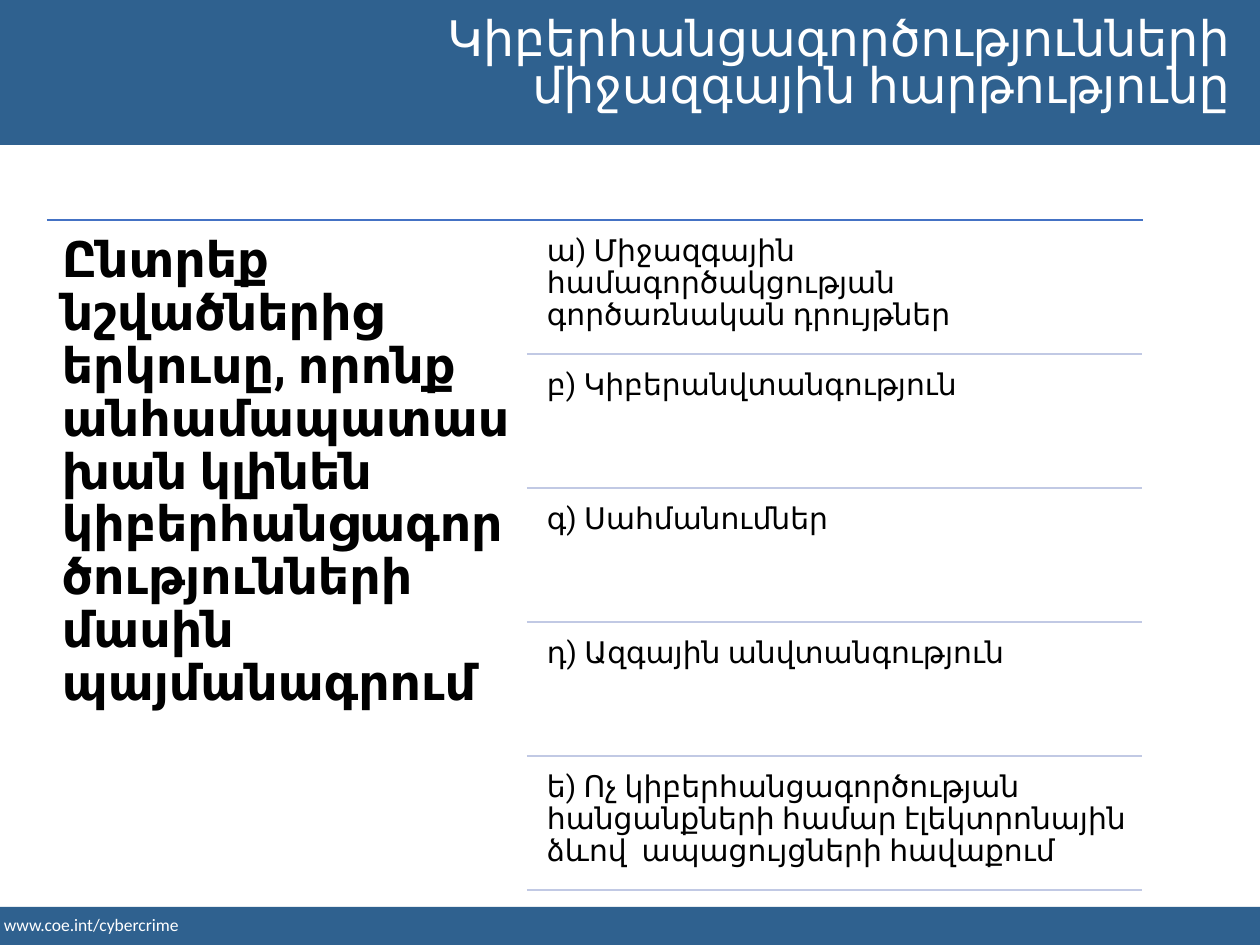
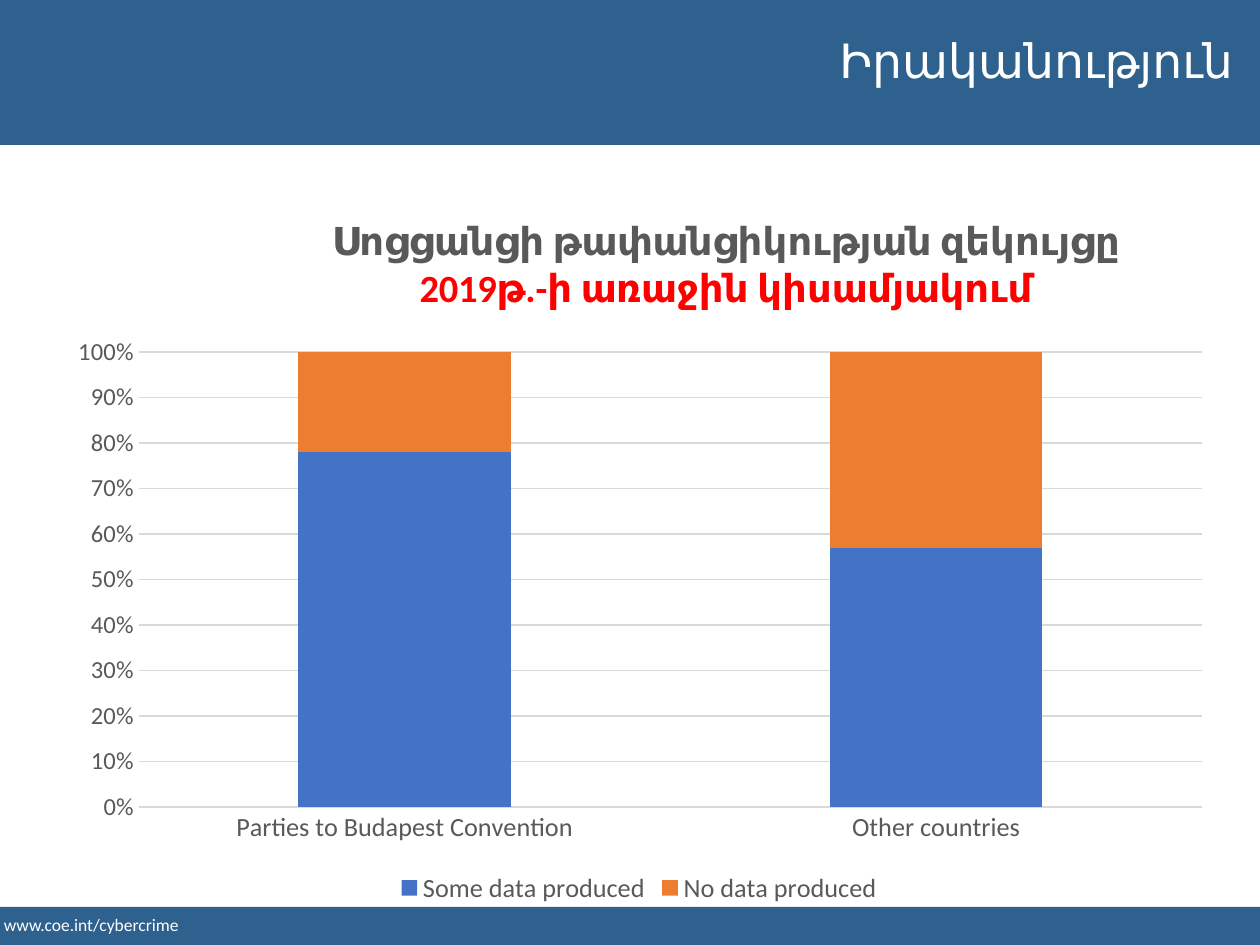
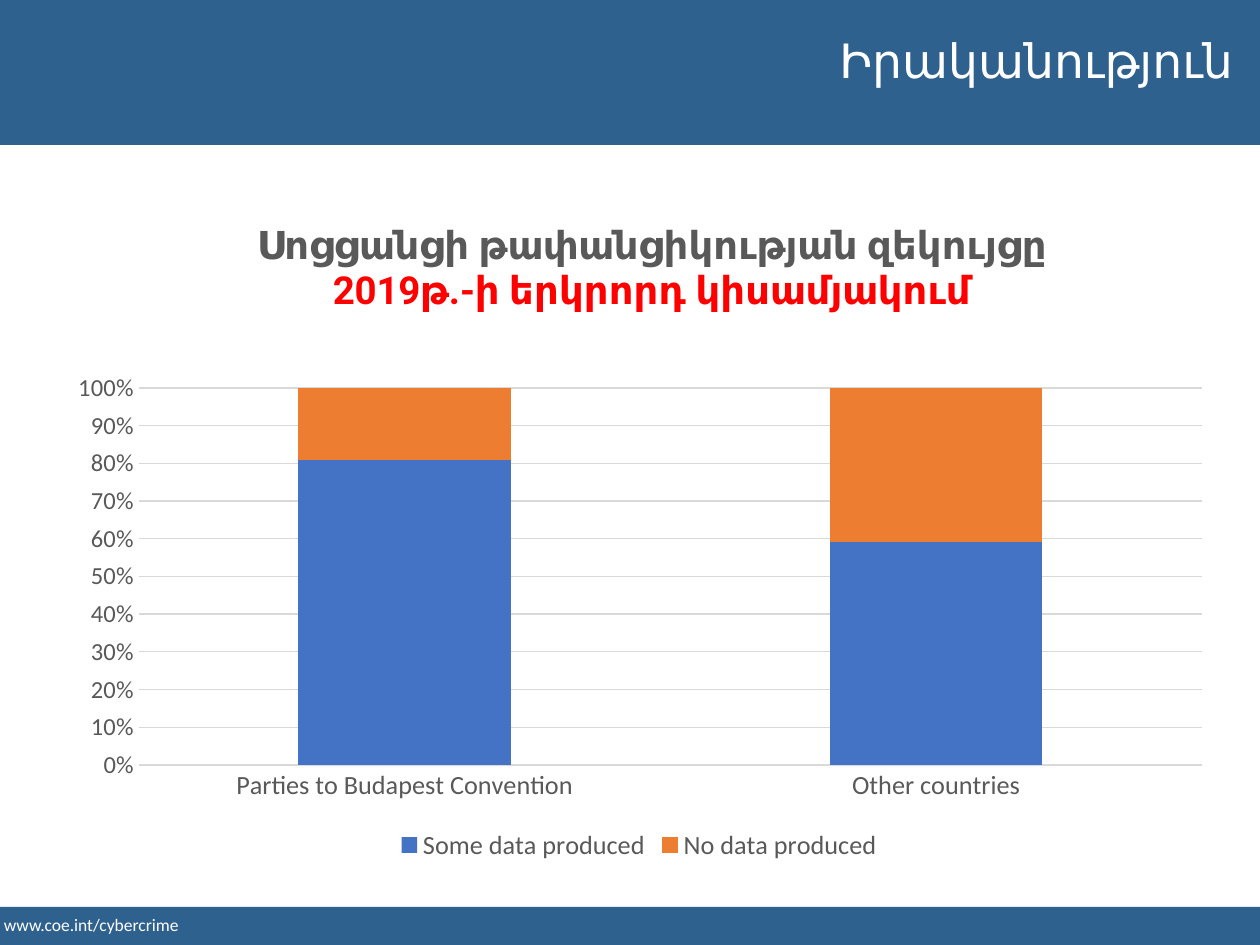
from lxml import etree
from pptx import Presentation
from pptx.chart.data import CategoryChartData
from pptx.dml.color import RGBColor
from pptx.enum.chart import XL_CHART_TYPE, XL_LEGEND_POSITION, XL_TICK_MARK
from pptx.enum.shapes import MSO_CONNECTOR, MSO_SHAPE
from pptx.enum.text import MSO_ANCHOR, PP_ALIGN
from pptx.oxml.ns import qn
from pptx.util import Emu, Pt

STACKED = XL_CHART_TYPE.COLUMN_STACKED_100
BOTTOM = XL_LEGEND_POSITION.BOTTOM
NO_TICK = XL_TICK_MARK.NONE
STRAIGHT = MSO_CONNECTOR.STRAIGHT
RECTANGLE = MSO_SHAPE.RECTANGLE
TOP = MSO_ANCHOR.TOP
LEFT, RIGHT, CENTER = PP_ALIGN.LEFT, PP_ALIGN.RIGHT, PP_ALIGN.CENTER

EMU_PER_PX = 914400 / 126
SLIDE_W, SLIDE_H = 1260, 945

BAND, WHITE, BLACK, RED = "2F618F", "FFFFFF", "000000", "FF0000"
BLUE, ORANGE, PALE_BLUE = "4472C4", "ED7D31", "C1C9E4"
GREY, GRID = "595959", "D9D9D9"
HEADING_FONT, BODY_FONT = "Roboto", "Calibri"

ANSWERS = [
    "ա) Միջազգային համագործակցության գործառնական դրույթներ",
    "բ) Կիբերանվտանգություն",
    "գ) Սահմանումներ",
    "դ) Ազգային անվտանգություն",
    "ե) Ոչ կիբերհանցագործության հանցանքների համար էլեկտրոնային ձևով  ապացույցների հավաքում",
]
COUNTRY_GROUPS = ["Parties to Budapest Convention", "Other countries"]
REPORT = "Սոցցանցի թափանցիկության զեկույցը"


def px(value):
    return Emu(round(value * EMU_PER_PX))


def color(hex_text):
    return RGBColor.from_string(hex_text)


def style_font(font, name, size, hex_text, bold=False):
    font.name, font.size, font.bold = name, Pt(size), bold
    font.color.rgb = color(hex_text)


def write(paragraph, text, font=HEADING_FONT, size=17, hex_text=BLACK,
          bold=False, align=LEFT, spacing=None):
    paragraph.alignment = align
    if spacing:
        paragraph.line_spacing = spacing
    run = paragraph.add_run()
    run.text = text
    style_font(run.font, font, size, hex_text, bold)


def set_frame(frame, inset_x, inset_y):
    frame.word_wrap = True
    frame.vertical_anchor = TOP
    frame.margin_left = frame.margin_right = px(inset_x)
    frame.margin_top = frame.margin_bottom = px(inset_y)


def add_text(slide, box, text, inset_x, inset_y, **fmt):
    textbox = slide.shapes.add_textbox(*map(px, box))
    set_frame(textbox.text_frame, inset_x, inset_y)
    write(textbox.text_frame.paragraphs[0], text, **fmt)
    return textbox


def add_band(slide, top, height):
    band = slide.shapes.add_shape(RECTANGLE, 0, px(top), px(SLIDE_W), px(height))
    band.shadow.inherit = False
    band.fill.solid()
    band.fill.fore_color.rgb = color(BAND)
    band.line.fill.background()
    return band


def add_rule(slide, left, right, y, hex_text):
    rule = slide.shapes.add_connector(STRAIGHT, px(left), px(y), px(right), px(y))
    rule.line.color.rgb = color(hex_text)
    rule.line.width = Pt(1)
    etree.SubElement(rule.element.spPr, qn("a:effectLst"))


def share_bands(slide, layout):
    """Draw the bands and footer, then move them to the layout."""
    parts = [
        add_band(slide, -4, 149),
        add_band(slide, 907, 40),
        add_text(slide, (-9, 908, 444, 34), "www.coe.int/cybercrime", 13, 6,
                 font=BODY_FONT, size=10, hex_text=WHITE),
    ]
    for number, part in enumerate(parts):
        part.element.nvSpPr.cNvPr.set("id", str(100 + number))
        layout.shapes.element.insert(2 + number, part.element)


def set_title(slide, box, text, size, spacing=None):
    title = slide.shapes.title
    title.left, title.top, title.width, title.height = map(px, box)
    set_frame(title.text_frame, 13, 6)
    write(title.text_frame.paragraphs[0], text, size=size, hex_text=WHITE,
          align=RIGHT, spacing=spacing)


def make_layout(chart_box, left, top, width=None, height=None):
    """Manual chart layout for a place given in slide px."""
    chart_left, chart_top, chart_w, chart_h = chart_box
    settings = [("xMode", "edge"), ("yMode", "edge"),
                ("x", (left - chart_left) / chart_w),
                ("y", (top - chart_top) / chart_h)]
    if width:
        settings.insert(0, ("layoutTarget", "inner"))
        settings += [("w", width / chart_w), ("h", height / chart_h)]
    layout = etree.Element(qn("c:layout"))
    manual = etree.SubElement(layout, qn("c:manualLayout"))
    for tag, value in settings:
        text = value if isinstance(value, str) else f"{value:.4f}"
        etree.SubElement(manual, qn(f"c:{tag}")).set("val", text)
    return layout


def replace_layout(parent, layout, index):
    for old in parent.findall(qn("c:layout")):
        parent.remove(old)
    parent.insert(index, layout)


def style_axes(chart):
    countries, share = chart.category_axis, chart.value_axis
    for axis, size in ((countries, 15), (share, 14)):
        axis.major_tick_mark = axis.minor_tick_mark = NO_TICK
        style_font(axis.tick_labels.font, BODY_FONT, size, GREY)
    share.has_major_gridlines = True
    for line in (countries.format.line, share.major_gridlines.format.line):
        line.color.rgb = color(GRID)
        line.width = Pt(0.75)
    share.format.line.fill.background()
    share.tick_labels.number_format = "0%"
    share.tick_labels.number_format_is_linked = False


def add_report_chart(slide, box, plot_box, title_place, title_font, period,
                     produced, refused):
    data = CategoryChartData(number_format="#,##0")
    data.categories = COUNTRY_GROUPS
    data.add_series("Some data produced", produced)
    data.add_series("No data produced", refused)
    chart = slide.shapes.add_chart(STACKED, *map(px, box), data).chart
    style_font(chart.font, BODY_FONT, 10, BLACK)

    # Bars
    plot = chart.plots[0]
    plot.gap_width, plot.overlap, plot.vary_by_categories = 150, 100, False
    for series, fill in zip(plot.series, (BLUE, ORANGE)):
        series.format.fill.solid()
        series.format.fill.fore_color.rgb = color(fill)
    style_axes(chart)
    replace_layout(chart.element.chart.plotArea, make_layout(box, *plot_box), 0)

    # Legend
    chart.has_legend = True
    chart.legend.position = BOTTOM
    chart.legend.include_in_layout = False
    style_font(chart.legend.font, BODY_FONT, 15, GREY)

    # Heading
    chart.has_title = True
    heading = chart.chart_title.text_frame
    write(heading.paragraphs[0], REPORT, font=title_font, size=22,
          hex_text=GREY, bold=True, align=CENTER)
    write(heading.add_paragraph(), period, font=title_font, size=22,
          hex_text=RED, bold=True, align=CENTER)
    replace_layout(chart.chart_title.element, make_layout(box, *title_place), 1)


def add_question(slide):
    add_rule(slide, 47, 1143, 220, BLUE)
    add_text(slide, (47, 220, 480, 677),
             "Ընտրեք նշվածներից երկուսը, որոնք անհամապատասխան կլինեն "
             "կիբերհանցագործությունների մասին պայմանագրում",
             15, 15, size=28, bold=True, spacing=0.9)
    row_pitch = 134
    for row, answer in enumerate(ANSWERS):
        top = 227 + row * row_pitch
        add_text(slide, (538, top, 604, 127), answer, 9, 9, spacing=0.9)
        add_rule(slide, 527, 1142, top + 127, PALE_BLUE)


def main():
    deck = Presentation()
    deck.slide_width, deck.slide_height = px(SLIDE_W), px(SLIDE_H)
    title_only = deck.slide_layouts[5]

    # Question
    question = deck.slides.add_slide(title_only)
    share_bands(question, title_only)
    set_title(question, (375, 13, 868, 110),
              "Կիբերհանցագործությունների միջազգային հարթությունը", 28, 0.8)
    add_question(question)

    # Transparency reports, one slide for each half-year
    reports = [
        ((54, 195, 1170, 714), (139, 352, 1063, 455), (328, 212), BODY_FONT,
         "2019թ.-ի առաջին կիսամյակում", (78, 57), (22, 43)),
        ((54, 193, 1170, 673), (139, 388, 1063, 377), (253, 218), HEADING_FONT,
         "2019թ.-ի երկրորդ կիսամյակում", (81, 59), (19, 41)),
    ]
    for report in reports:
        reality = deck.slides.add_slide(title_only)
        set_title(reality, (174, 25, 1072, 71), "Իրականություն", 27)
        add_report_chart(reality, *report)

    deck.save("out.pptx")


if __name__ == "__main__":
    main()
